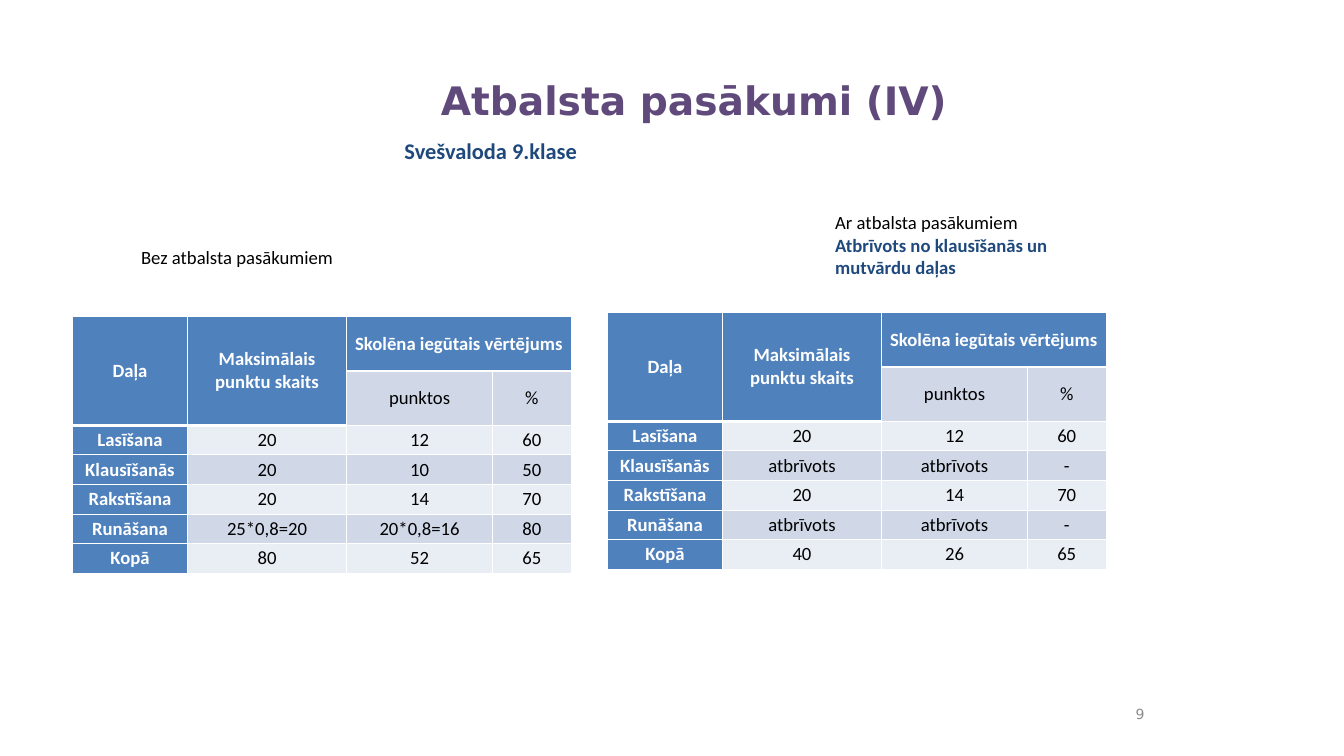
from dataclasses import dataclass

from lxml.etree import SubElement
from pptx import Presentation
from pptx.dml.color import RGBColor as RGB
from pptx.enum.text import MSO_ANCHOR as Anchor, PP_ALIGN as Align
from pptx.oxml.ns import qn
from pptx.util import Emu, Pt


@dataclass(frozen=True)
class Theme:
    body_font: str = "Calibri"
    title_font: str = "DejaVu Sans"
    title: str = "604A7B"
    accent: str = "1F497D"
    text: str = "000000"
    muted: str = "8C8C8C"
    white: str = "FFFFFF"
    header: str = "4F81BD"
    band_dark: str = "D0D8E8"
    band_light: str = "E9EDF4"
    title_size: int = 42
    subtitle_size: int = 24
    body_size: int = 20
    number_size: int = 15


T = Theme()

HEADERS = ["Daļa", "Maksimālais punktu skaits", "Skolēna iegūtais vērtējums"]
SUBHEADERS = ["punktos", "%"]
PARTS = ["Lasīšana", "Klausīšanās", "Rakstīšana", "Runāšana", "Kopā"]
COLUMNS = [171, 237, 217, 117]
ROWS = [81, 81] + [44] * len(PARTS)
STANDARD = [
    ["20", "12", "60"],
    ["20", "10", "50"],
    ["20", "14", "70"],
    ["25*0,8=20", "20*0,8=16", "80"],
    ["80", "52", "65"],
]
SUPPORTED = [
    ["20", "12", "60"],
    ["atbrīvots", "atbrīvots", "-"],
    ["20", "14", "70"],
    ["atbrīvots", "atbrīvots", "-"],
    ["40", "26", "65"],
]


def px(n):
    """One px is a hundredth of an inch."""
    return Emu(n * 9144)


def style(p, size, color, bold=False, font=T.body_font, align=Align.LEFT):
    p.alignment = align
    for r in p.runs:
        r.font.name = font
        r.font.size = Pt(size)
        r.font.bold = bold
        r.font.color.rgb = RGB.from_string(color)


def add_text(slide, box, lines, anchor=Anchor.TOP):
    """Add a text box; lines holds (text, style arguments) pairs."""
    tf = slide.shapes.add_textbox(*map(px, box)).text_frame
    tf.word_wrap = True
    tf.vertical_anchor = anchor
    tf.text = "\n".join(text for text, _ in lines)
    for p, (_, look) in zip(tf.paragraphs, lines):
        style(p, **look)
    return tf


def add_heading(slide, box):
    """Title with the subject line below it."""
    left, top, width, height = box
    title = slide.shapes.title
    title.left, title.top, title.width, title.height = map(px, (left, top, width, height))
    tf = title.text_frame
    tf.text = "Atbalsta pasākumi (IV)"
    tf.vertical_anchor = Anchor.TOP
    style(tf.paragraphs[0], T.title_size, T.title, True, T.title_font)

    look = dict(size=T.subtitle_size, color=T.accent, bold=True)
    tf = add_text(slide, (left - 54, top + 85, 479, 54), [("Svešvaloda 9.klase", look)])
    tf.paragraphs[0].line_spacing = 1.15
    tf.paragraphs[0].space_after = Pt(10)


def add_borders(cell, bottom):
    tc_pr = cell._tc.get_or_add_tcPr()
    for side, width in (("L", 1), ("R", 1), ("T", 1), ("B", bottom)):
        line = SubElement(tc_pr, qn(f"a:ln{side}"), w=str(Pt(width)))
        fill = SubElement(line, qn("a:solidFill"))
        SubElement(fill, qn("a:srgbClr"), val=T.white)


def add_score_table(slide, left, top, scores):
    """Score table with a two-row header and one row per exam part."""
    grid = [HEADERS + [""], ["", ""] + SUBHEADERS]
    grid += [[part] + row for part, row in zip(PARTS, scores)]
    box = (left, top, sum(COLUMNS), sum(ROWS))
    table = slide.shapes.add_table(len(ROWS), len(COLUMNS), *map(px, box)).table
    table.first_row = table.horz_banding = False
    for column, width in zip(table.columns, COLUMNS):
        column.width = px(width)
    for row, height in zip(table.rows, ROWS):
        row.height = px(height)

    for i, row in enumerate(grid):
        for j, text in enumerate(row):
            cell = table.cell(i, j)
            in_header = i == 0 or (i == 1 and j < 2)
            is_head = in_header or j == 0
            band = T.band_dark if i % 2 else T.band_light
            add_borders(cell, bottom=3 if in_header else 1)
            cell.fill.solid()
            cell.fill.fore_color.rgb = RGB.from_string(T.header if is_head else band)
            cell.margin_left = cell.margin_right = px(7)
            cell.margin_top = cell.margin_bottom = 0
            cell.vertical_anchor = Anchor.MIDDLE
            cell.text = text
            style(cell.text_frame.paragraphs[0], T.body_size,
                  T.white if is_head else T.text, is_head, align=Align.CENTER)

    # Header spans
    for j in (0, 1):
        table.cell(0, j).merge(table.cell(1, j))
    table.cell(0, 2).merge(table.cell(0, 3))


def add_page_number(slide, box):
    look = dict(size=T.number_size, color=T.muted, font=T.title_font, align=Align.RIGHT)
    add_text(slide, box, [("9", look)], Anchor.MIDDLE)


def main():
    prs = Presentation()
    prs.slide_width, prs.slide_height = px(2000), px(1125)
    slide = prs.slides.add_slide(prs.slide_layouts[5])
    plain = dict(size=T.body_size, color=T.text)
    strong = dict(size=T.body_size, color=T.accent, bold=True)

    add_heading(slide, (646, 108, 1029, 81))

    # Without support measures
    add_text(slide, (200, 361, 358, 44), [("Bez atbalsta pasākumiem", plain)])
    add_score_table(slide, 108, 471, STANDARD)

    # With support measures
    add_text(slide, (1233, 309, 383, 145), [
        ("Ar atbalsta pasākumiem", plain),
        ("Atbrīvots no klausīšanās un mutvārdu daļas", strong),
    ])
    add_score_table(slide, 904, 465, SUPPORTED)

    add_page_number(slide, (1650, 1038, 63, 50))
    prs.save("out.pptx")


if __name__ == "__main__":
    main()
